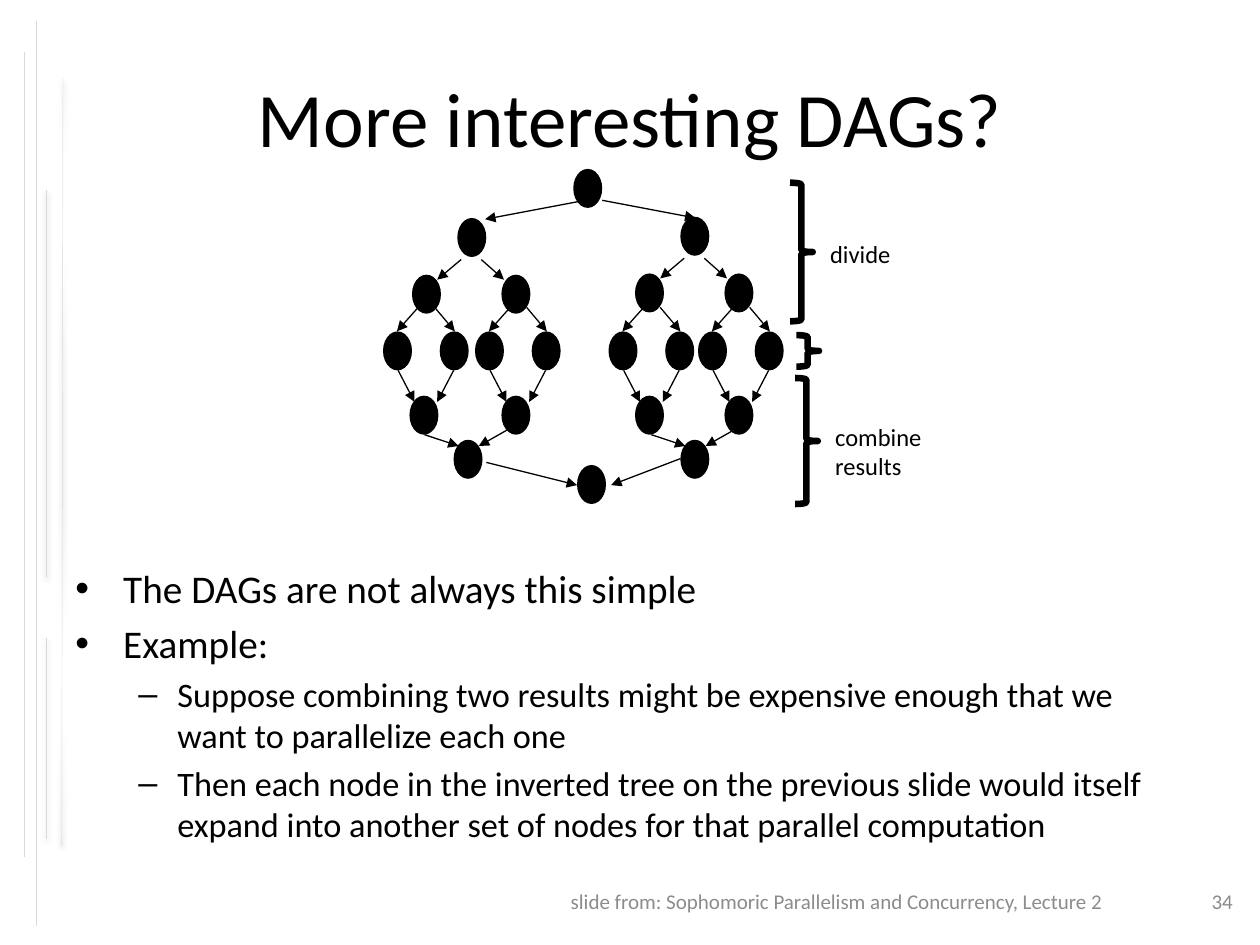
from lxml.etree import SubElement
from pptx import Presentation
from pptx.dml.color import RGBColor
from pptx.enum.shapes import MSO_CONNECTOR, MSO_SHAPE
from pptx.enum.text import MSO_ANCHOR as Anchor, PP_ALIGN as Align
from pptx.oxml.ns import qn
from pptx.util import Inches, Pt

BLACK = RGBColor(0x00, 0x00, 0x00)
GREY = RGBColor(0x8C, 0x8C, 0x8C)
LIGHT_GREY = RGBColor(0xD9, 0xD9, 0xD9)
FONT = "Calibri"

TITLE = "More interesting DAGs?"
BULLETS = [  # level, text
    (0, "The DAGs are not always this simple"),
    (0, "Example:"),
    (1, "Suppose combining two results might be expensive enough that we "
        "want to parallelize each one"),
    (1, "Then each node in the inverted tree on the previous slide would itself "
        "expand into another set of nodes for that parallel computation"),
]
BULLET_STYLES = [  # size, left margin, hanging indent, mark
    (22.4, 0.38, 0.38, "•"),
    (19.6, 0.81, 0.31, "–"),
]
FOOTER = "slide from: Sophomoric Parallelism and Concurrency, Lecture 2"
PAGE_NUMBER = "34"
LABELS = [("divide", 6.49, 1.85, 1, 0.34), ("combine results", 6.53, 3.3, 0.96, 0.57)]
BRACES = [(6.27, 1.45, 1.1), (6.32, 2.66, 0.25), (6.31, 3, 1)]  # left, top, height
MARGIN_LINES = [
    (0.5, 0.62, 0.49, 6.71),
    (0.19, 0.41, 0.19, 6.8),
    (0.37, 1.51, 0.37, 4.58),
    (0.29, 0.17, 0.29, 7.35),
    (0.37, 5.06, 0.37, 6.66),
]

# Each part of the graph: origins where it is repeated, then offsets of its nodes and arrows
GRAPH = [
    {   # the first fork and the last join
        "origins": [(0, 0)],
        "nodes": [(4.55, 1.34), (4.58, 3.69)],
        "arrows": [(4.59, 1.6, 3.85, 1.74), (4.78, 1.59, 5.52, 1.73),
                   (3.86, 3.67, 4.58, 3.85), (5.4, 3.64, 4.85, 3.85)],
    },
    {   # forks of the two halves
        "origins": [(3.63, 1.73), (5.4, 1.72)],
        "nodes": [(0, 0), (-0.36, 0.45), (0.35, 0.45)],
        "arrows": [(0.03, 0.33, -0.16, 0.49), (0.19, 0.33, 0.37, 0.49)],
    },
    {   # diamonds, from fork through two leaves to join
        "origins": [(3.04, 2.63), (3.77, 2.63), (4.83, 2.63), (5.54, 2.63)],
        "nodes": [(0, 0), (0.45, 0), (0.21, 0.51)],
        "arrows": [(0.27, -0.18, 0.11, 0), (0.41, -0.19, 0.57, 0),
                   (0.12, 0.31, 0.25, 0.56), (0.56, 0.31, 0.43, 0.56)],
    },
    {   # joins of the two halves
        "origins": [(3.6, 3.49), (5.4, 3.49)],
        "nodes": [(0, 0)],
        "arrows": [(-0.23, -0.04, 0.04, 0.05), (0.43, -0.08, 0.2, 0.05)],
    },
]


def add_line(slide, ends, color, width):
    line = slide.shapes.add_connector(MSO_CONNECTOR.STRAIGHT, *map(Inches, ends))
    line.line.color.rgb = color
    line.line.width = Pt(width)
    return line, SubElement(line._element.spPr, qn("a:effectLst"))


def add_margin_line(slide, ends):
    effects = add_line(slide, ends, LIGHT_GREY, 0.25)[1]
    shadow = SubElement(effects, qn("a:outerShdw"), blurRad=str(Pt(3.1)),
                        dist=str(Pt(1.6)), dir="5400000", rotWithShape="0")
    color = SubElement(shadow, qn("a:srgbClr"), val=str(BLACK))
    SubElement(color, qn("a:alpha"), val="38000")


def add_arrow(slide, ends):
    line = add_line(slide, ends, BLACK, 0.75)[0]
    SubElement(line.line._get_or_add_ln(), qn("a:tailEnd"), type="triangle")


def add_node(slide, left, top):
    node = slide.shapes.add_shape(MSO_SHAPE.OVAL, *map(Inches, (left, top, 0.23, 0.31)))
    node.shadow.inherit = False
    node.fill.solid()
    node.fill.fore_color.rgb = BLACK
    node.line.fill.background()


def add_brace(slide, left, top, height):
    brace = slide.shapes.add_shape(MSO_SHAPE.LEFT_BRACE,
                                   *map(Inches, (left, top, 0.18, height)))
    brace.shadow.inherit = False
    brace.rotation = 180
    brace.fill.background()
    brace.line.color.rgb = BLACK
    brace.line.width = Pt(3.75)


def style(paragraph, text, size, color=BLACK, align=Align.LEFT):
    paragraph.text = text
    paragraph.alignment = align
    paragraph.font.name = FONT
    paragraph.font.size = Pt(size)
    paragraph.font.color.rgb = color


def add_frame(slide, box, anchor=Anchor.TOP):
    frame = slide.shapes.add_textbox(*map(Inches, box)).text_frame
    frame.word_wrap = True
    frame.vertical_anchor = anchor
    return frame


def add_text(slide, box, text, size, color=BLACK, align=Align.LEFT, anchor=Anchor.TOP):
    style(add_frame(slide, box, anchor).paragraphs[0], text, size, color, align)


def add_bullets(slide, box):
    frame = add_frame(slide, box)
    for index, (level, text) in enumerate(BULLETS):
        size, margin, hanging, mark = BULLET_STYLES[level]
        paragraph = frame.add_paragraph() if index else frame.paragraphs[0]
        style(paragraph, text, size)
        paragraph.level = level
        paragraph.space_before = Pt(round(size * 0.2, 1))
        properties = paragraph._p.get_or_add_pPr()
        properties.set("marL", str(Inches(margin)))
        properties.set("indent", str(-Inches(hanging)))
        bullet_font = properties.makeelement(qn("a:buFont"), {"typeface": "Arial"})
        bullet = properties.makeelement(qn("a:buChar"), {"char": mark})
        properties.find(qn("a:defRPr")).addprevious(bullet_font)
        bullet_font.addnext(bullet)


def add_graph(slide):
    for part in GRAPH:
        for x, y in part["origins"]:
            for left, top in part["nodes"]:
                add_node(slide, x + left, y + top)
            for x1, y1, x2, y2 in part["arrows"]:
                add_arrow(slide, (x + x1, y + y1, x + x2, y + y2))


def main():
    presentation = Presentation()
    presentation.slide_width, presentation.slide_height = Inches(10), Inches(7.5)
    slide = presentation.slides.add_slide(presentation.slide_layouts[6])
    for ends in MARGIN_LINES:
        add_margin_line(slide, ends)
    add_text(slide, (0.5, 0.3, 9, 1.25), TITLE, 44, BLACK, Align.CENTER, Anchor.MIDDLE)
    add_bullets(slide, (0.5, 4.43, 9, 2.27))
    add_text(slide, (9.42, 6.95, 0.56, 0.4), PAGE_NUMBER, 12, GREY,
             Align.CENTER, Anchor.MIDDLE)
    add_text(slide, (3.12, 6.95, 5.73, 0.4), FOOTER, 12, GREY, Align.RIGHT, Anchor.MIDDLE)
    add_graph(slide)
    for brace in BRACES:
        add_brace(slide, *brace)
    for text, *box in LABELS:
        add_text(slide, box, text, 14)
    presentation.save("out.pptx")


if __name__ == "__main__":
    main()
